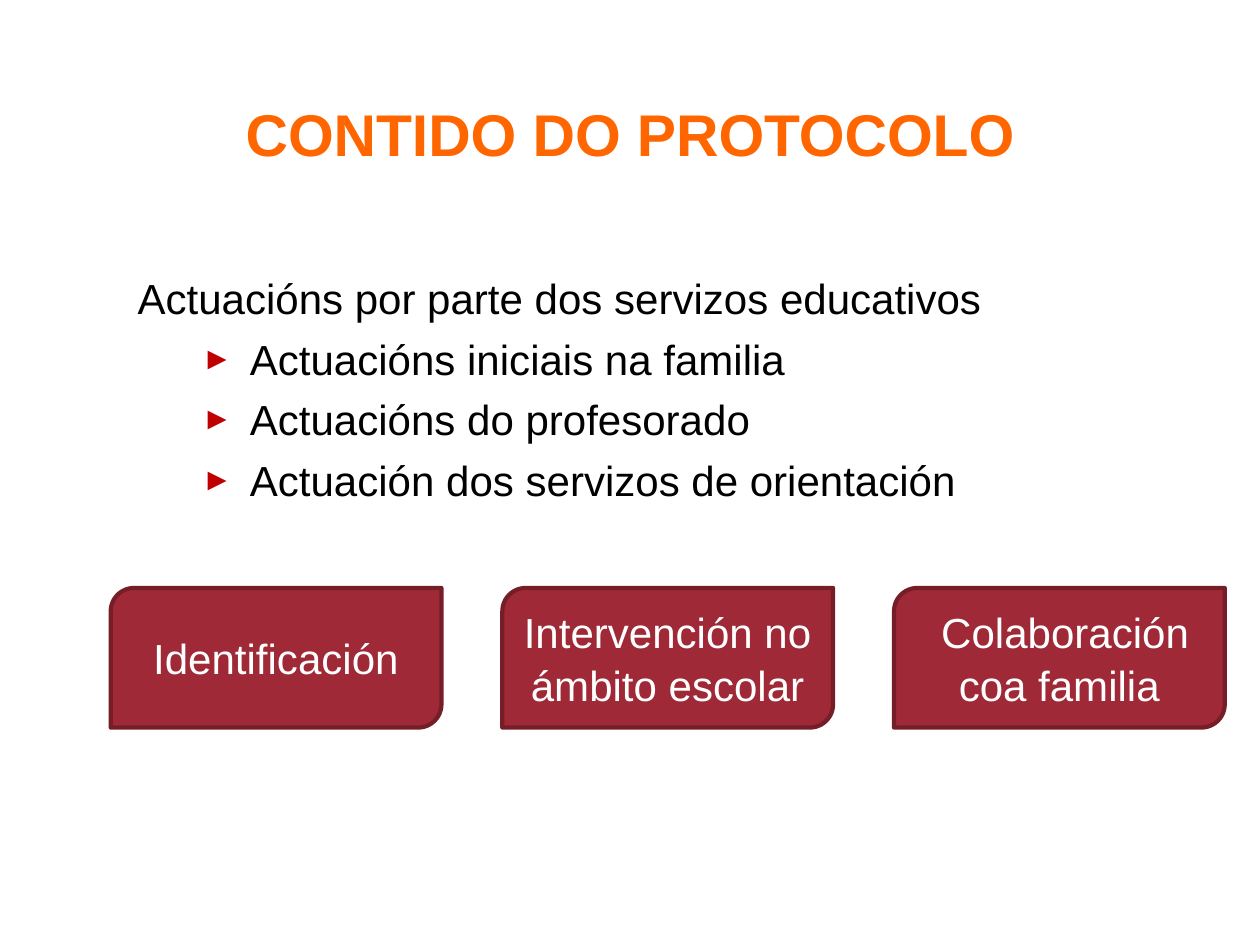
from lxml import etree
from pptx import Presentation
from pptx.dml.color import RGBColor
from pptx.enum.shapes import MSO_SHAPE
from pptx.enum.text import MSO_ANCHOR, MSO_AUTO_SIZE, PP_ALIGN
from pptx.oxml.ns import qn
from pptx.util import Pt

CENTER, LEFT = PP_ALIGN.CENTER, PP_ALIGN.LEFT
MIDDLE, TOP = MSO_ANCHOR.MIDDLE, MSO_ANCHOR.TOP
NO_AUTOFIT = MSO_AUTO_SIZE.NONE
DIAGONAL_ROUNDED = MSO_SHAPE.ROUND_2_DIAG_RECTANGLE

COLORS = {"title": "FF6600", "text": "000000", "bullet": "C00000",
          "box": "9F2936", "border": "761E28", "label": "FFFFFF"}


def write(shape, lines, color, size=20, bold=False, align=CENTER,
          anchor=MIDDLE, inset=(3, 3), gap=0):
    """Fill a shape with one formatted paragraph per line."""
    frame = shape.text_frame
    frame.word_wrap = True
    frame.auto_size = NO_AUTOFIT
    frame.vertical_anchor = anchor
    frame.margin_left = frame.margin_right = Pt(inset[0])
    frame.margin_top = frame.margin_bottom = Pt(inset[1])
    frame.text = "\n".join(lines)
    for index, paragraph in enumerate(frame.paragraphs):
        paragraph.alignment = align
        paragraph.space_before = Pt(gap if index else 0)
        for run in paragraph.runs:
            run.font.name = "Arial"
            run.font.size = Pt(size)
            run.font.bold = bold
            run.font.color.rgb = RGBColor.from_string(COLORS[color])


def set_bullet(paragraph, symbol=None, margin=0, hanging=0):
    props = paragraph._p.get_or_add_pPr()
    props.set("marL", str(Pt(margin)))
    props.set("indent", str(-Pt(hanging)))
    if symbol is None:
        etree.SubElement(props, qn("a:buNone"))
        return
    bullet_color = etree.SubElement(props, qn("a:buClr"))
    etree.SubElement(bullet_color, qn("a:srgbClr"), val=COLORS["bullet"])
    etree.SubElement(props, qn("a:buSzPct"), val="75000")
    etree.SubElement(props, qn("a:buFont"), typeface="Arial")
    etree.SubElement(props, qn("a:buChar"), char=symbol)


prs = Presentation()
prs.slide_width, prs.slide_height = Pt(600), Pt(450)
slide = prs.slides.add_slide(prs.slide_layouts[1])
title, actions = slide.placeholders

title.left, title.top, title.width, title.height = Pt(45), Pt(23), Pt(510), Pt(81)
write(title, ["CONTIDO DO PROTOCOLO"], "title", size=28, bold=True)

actions.left, actions.top, actions.width, actions.height = Pt(62.5), Pt(126), Pt(531), Pt(117)
write(actions, ["Actuacións por parte dos servizos educativos",
                "Actuacións iniciais na familia",
                "Actuacións do profesorado",
                "Actuación dos servizos de orientación"],
      "text", align=LEFT, anchor=TOP, inset=(3, 3.6), gap=5)
heading, *items = actions.text_frame.paragraphs
set_bullet(heading)
for item in items:
    item.level = 1
    set_bullet(item, "►", margin=53.5, hanging=23)

AREAS = [["Identificación"],
         ["Intervención no", "ámbito escolar"],
         [" Colaboración", "coa familia"]]
for column, label in enumerate(AREAS):
    box = slide.shapes.add_shape(DIAGONAL_ROUNDED, Pt(52.75 + 186.5 * column),
                                 Pt(280), Pt(157.5), Pt(66.5))
    box.shadow.inherit = False
    box.fill.solid()
    box.fill.fore_color.rgb = RGBColor.from_string(COLORS["box"])
    box.line.color.rgb = RGBColor.from_string(COLORS["border"])
    box.line.width = Pt(2)
    write(box, label, "label", gap=1.3)

prs.save("out.pptx")
